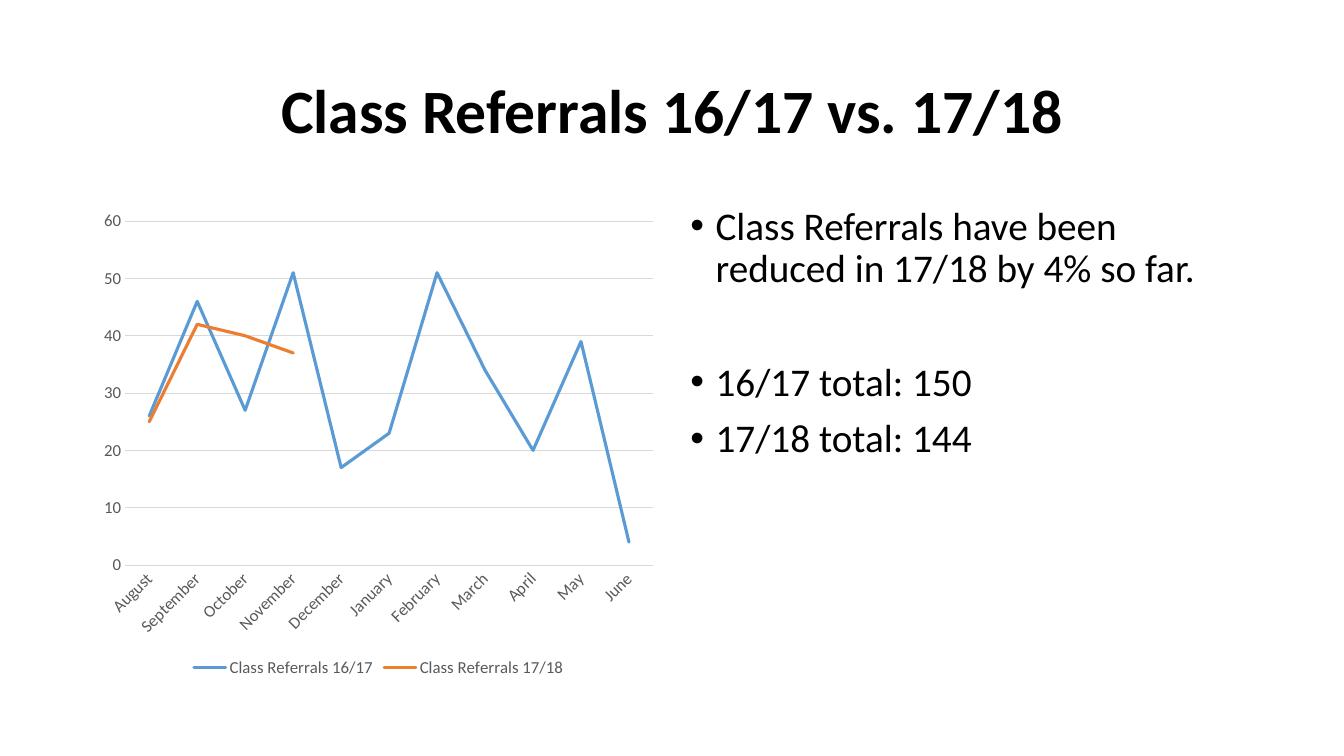
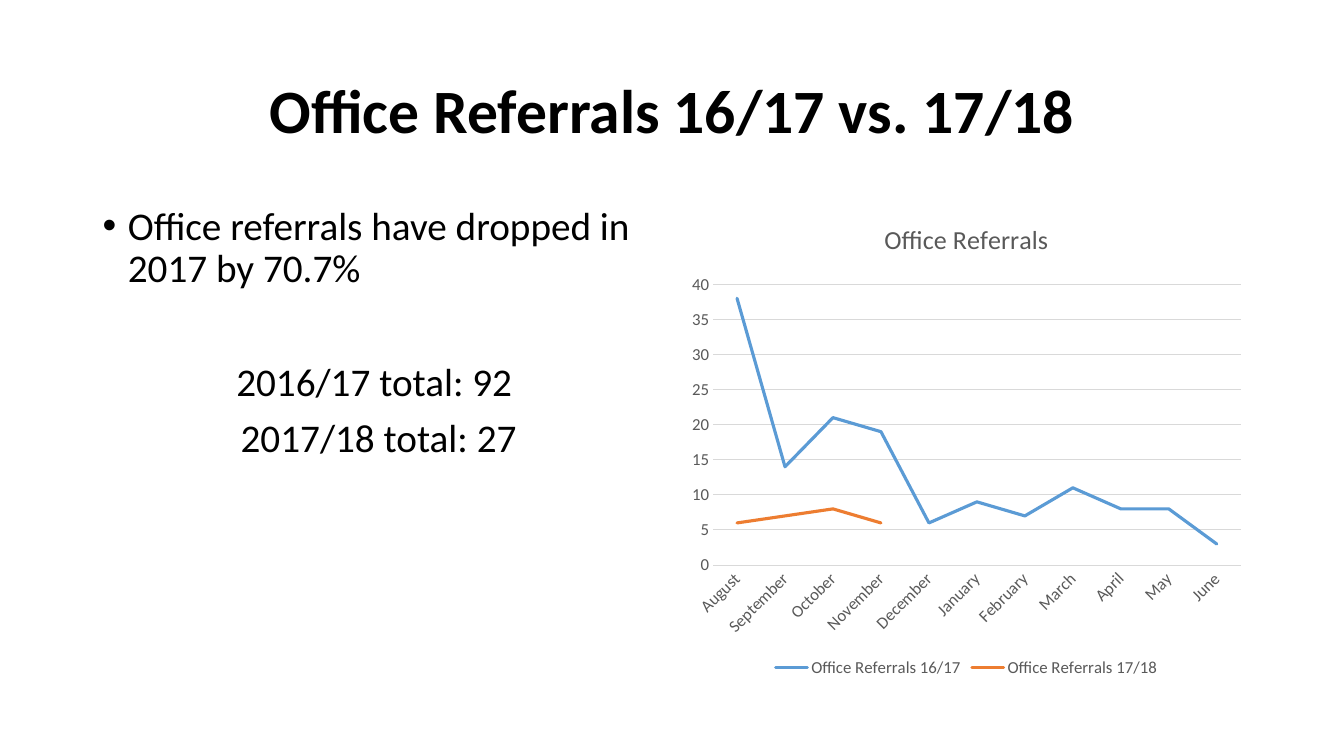
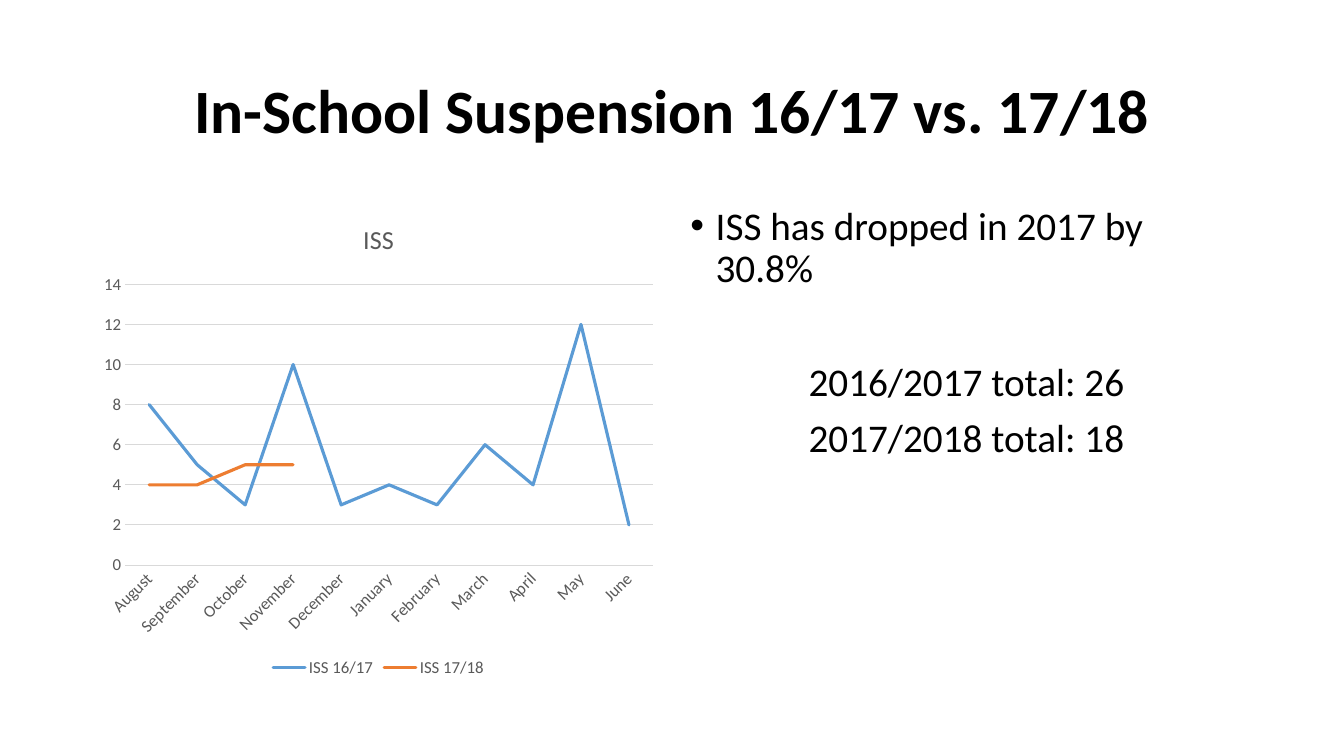
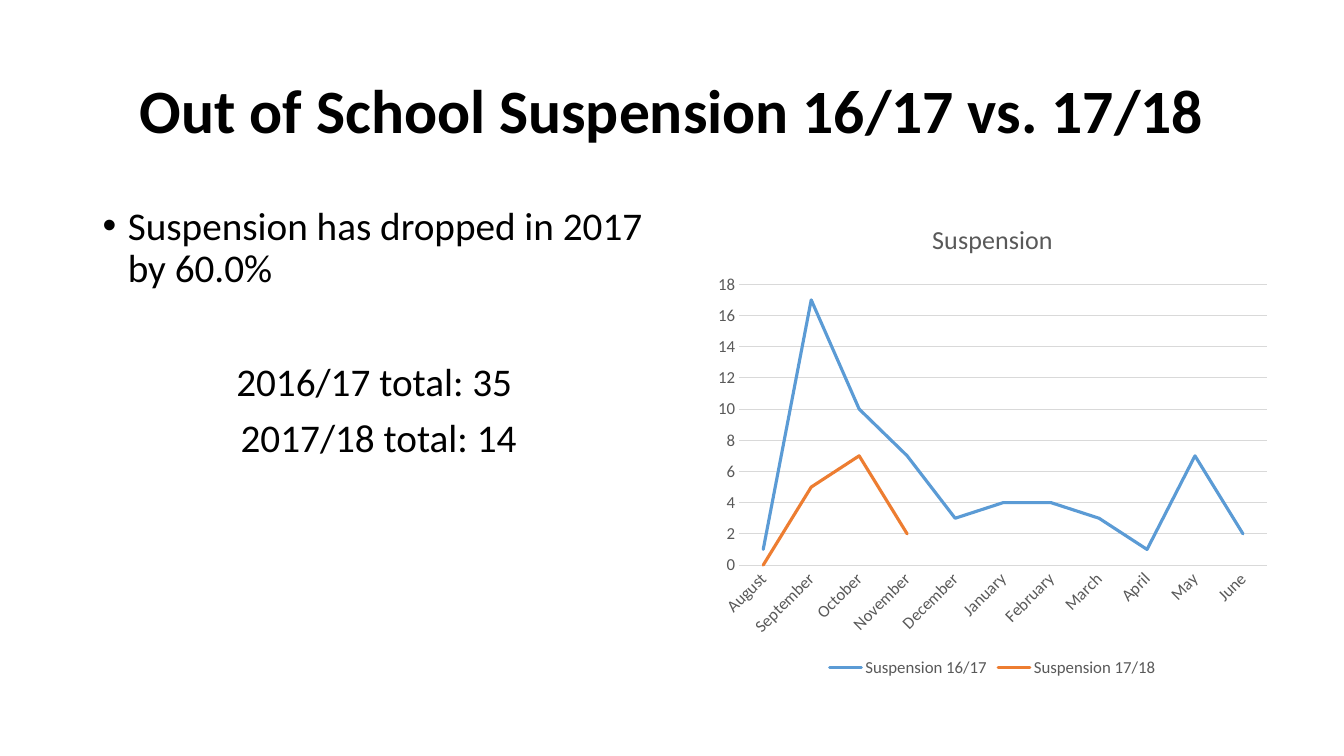
import dataclasses

import pptx
import pptx.chart.data
import pptx.dml.color
import pptx.enum.chart
import pptx.enum.text
import pptx.oxml
import pptx.oxml.ns
import pptx.util

Inches = pptx.util.Inches
Pt = pptx.util.Pt
ALIGN = pptx.enum.text.PP_ALIGN
ANCHOR = pptx.enum.text.MSO_ANCHOR


@dataclasses.dataclass(frozen=True)
class Theme:
    """Colours, type sizes and line widths of the deck."""

    face: str = "Calibri"
    ink: str = "000000"
    grey: str = "595959"
    rule: str = "D9D9D9"
    lines: tuple = ("5B9BD5", "ED7D31")
    head: float = 44
    body: float = 28
    chart: float = 18.6
    label: float = 12
    lead: float = 0.9
    space: float = 10
    gap: float = 51
    thin: float = 0.75
    thick: float = 2.25


THEME = Theme()
WIDTH, HEIGHT = 13.33, 7.5
HEAD = (0.92, 0.4, 11.5, 1.45)
LEFT = (0.92, 2, 5.67, 4.76)
RIGHT = (6.75, 2, 5.67, 4.76)
OUTER = (7.01, 2, 5.67, 4.76)
MONTHS = ("August", "September", "October", "November", "December", "January",
          "February", "March", "April", "May", "June")
YEARS = ("16/17", "17/18")
BULLET, CENTRE = "bullet", "centre"

SLIDES = (
    dict(head="Class Referrals", name="Class Referrals", title=None,
         points="Class Referrals have been reduced in 17/18 by 4% so far.",
         totals=("16/17 total: 150", "17/18 total: 144"), style=BULLET,
         chart=LEFT, text=RIGHT,
         values=((26, 46, 27, 51, 17, 23, 51, 34, 20, 39, 4), (25, 42, 40, 37))),
    dict(head="Office Referrals", name="Office Referrals", title="Office Referrals",
         points="Office referrals have dropped in 2017 by 70.7%",
         totals=("2016/17 total: 92 ", "2017/18 total: 27"), style=CENTRE,
         chart=RIGHT, text=LEFT,
         values=((38, 14, 21, 19, 6, 9, 7, 11, 8, 8, 3), (6, 7, 8, 6))),
    dict(head="In-School Suspension", name="ISS", title="ISS",
         points="ISS has dropped in 2017 by 30.8%",
         totals=("2016/2017 total: 26", "2017/2018 total: 18"), style=CENTRE,
         chart=LEFT, text=RIGHT,
         values=((8, 5, 3, 10, 3, 4, 3, 6, 4, 12, 2), (4, 4, 5, 5))),
    dict(head="Out of School Suspension", name="Suspension", title="Suspension",
         points="Suspension has dropped in 2017 by 60.0%",
         totals=("2016/17 total: 35 ", "2017/18 total: 14"), style=CENTRE,
         chart=OUTER, text=LEFT,
         values=((1, 17, 10, 7, 3, 4, 4, 3, 1, 7, 2), (0, 5, 7, 2))),
)


def apply(item, **values):
    """Set each named attribute of an item."""
    for key, value in values.items():
        setattr(item, key, value)


def ink(font, size, colour, bold=False):
    """Set the face, size, weight and colour of a font."""
    apply(font, name=THEME.face, size=Pt(size), bold=bold)
    font.color.rgb = pptx.dml.color.RGBColor.from_string(colour)


def stroke(line, colour, width):
    """Set the colour and width of a line."""
    line.color.rgb = pptx.dml.color.RGBColor.from_string(colour)
    line.width = Pt(width)


def place(box):
    """Turn a box in inches into lengths."""
    return [Inches(side) for side in box]


def frame(slide, box, anchor):
    """Add a wrapping text box and return its text frame."""
    area = slide.shapes.add_textbox(*place(box)).text_frame
    apply(area, word_wrap=True, vertical_anchor=anchor)
    return area


def write(para, text, size, before=0, style=CENTRE, bold=False):
    """Write one paragraph, centred or with a bullet."""
    apply(para, line_spacing=THEME.lead, space_before=Pt(before))
    run = para.add_run()
    run.text = text
    ink(run.font, size, THEME.ink, bold)
    if style == CENTRE:
        para.alignment = ALIGN.CENTER
        return
    props = para._p.get_or_add_pPr()
    for key, value in dict(marL=Inches(0.25), indent=Inches(-0.25)).items():
        props.set(key, str(value))
    space = pptx.oxml.ns.nsdecls("a")
    for tag in ('buFont {} typeface="Arial"', 'buChar {} char="•"'):
        props.append(pptx.oxml.parse_xml(f"<a:{tag.format(space)}/>"))


def add_head(slide, box, name):
    """Add the slide title."""
    area = frame(slide, box, ANCHOR.MIDDLE)
    write(area.paragraphs[0], f"{name} {YEARS[0]} vs. {YEARS[1]}", THEME.head, bold=True)


def add_text(slide, box, points, totals, style):
    """Add the finding and, below a gap, the totals."""
    area = frame(slide, box, ANCHOR.TOP)
    write(area.paragraphs[0], points, THEME.body, THEME.space, BULLET)
    for text, before in zip(totals, (THEME.gap, THEME.space)):
        write(area.add_paragraph(), text, THEME.body, before, style)


def add_chart(slide, box, name, title, values):
    """Add the line chart of both school years."""
    data = pptx.chart.data.CategoryChartData()
    data.categories = MONTHS
    for year, row in zip(YEARS, values):
        data.add_series(f"{name} {year}", row + (None,) * (len(MONTHS) - len(row)))
    kind = pptx.enum.chart.XL_CHART_TYPE.LINE
    chart = slide.shapes.add_chart(kind, *place(box), data).chart
    ink(chart.font, THEME.label, THEME.grey)
    apply(chart, has_title=bool(title), has_legend=True)
    if title:
        para = chart.chart_title.text_frame.paragraphs[0]
        run = para.add_run()
        run.text = title
        ink(run.font, THEME.chart, THEME.grey)
        chart.chart_title.include_in_layout = False
    apply(chart.legend, position=pptx.enum.chart.XL_LEGEND_POSITION.BOTTOM,
          include_in_layout=False)
    ink(chart.legend.font, THEME.label, THEME.grey)
    style_axes(chart)
    style_lines(chart)


def style_axes(chart):
    """Style both axes and the grid of a chart."""
    none = pptx.enum.chart.XL_TICK_MARK.NONE
    for axis in (chart.category_axis, chart.value_axis):
        apply(axis, major_tick_mark=none, minor_tick_mark=none)
        ink(axis.tick_labels.font, THEME.label, THEME.grey)
    stroke(chart.category_axis.format.line, THEME.rule, THEME.thin)
    chart.value_axis.format.line.fill.background()
    chart.value_axis.has_major_gridlines = True
    stroke(chart.value_axis.major_gridlines.format.line, THEME.rule, THEME.thin)
    for props in chart.element.xpath(".//c:catAx/c:txPr/a:bodyPr"):
        props.set("rot", "-2700000")


def style_lines(chart):
    """Style the lines of a chart, with round ends."""
    plot = chart.plots[0]
    plot.vary_by_categories = False
    for row, colour in zip(plot.series, THEME.lines):
        row.smooth = False
        row.marker.style = pptx.enum.chart.XL_MARKER_STYLE.NONE
        stroke(row.format.line, colour, THEME.thick)
    for line in chart.element.xpath(".//c:ser/c:spPr/a:ln"):
        line.set("cap", "rnd")


def add_slide(deck, part):
    """Add one slide with its title, chart and text."""
    slide = deck.slides.add_slide(deck.slide_layouts[6])
    add_head(slide, HEAD, part["head"])
    add_chart(slide, part["chart"], part["name"], part["title"], part["values"])
    add_text(slide, part["text"], part["points"], part["totals"], part["style"])


def main():
    """Build and save the deck."""
    deck = pptx.Presentation()
    apply(deck, slide_width=Inches(WIDTH), slide_height=Inches(HEIGHT))
    for part in SLIDES:
        add_slide(deck, part)
    deck.save("out.pptx")


if __name__ == "__main__":
    main()
